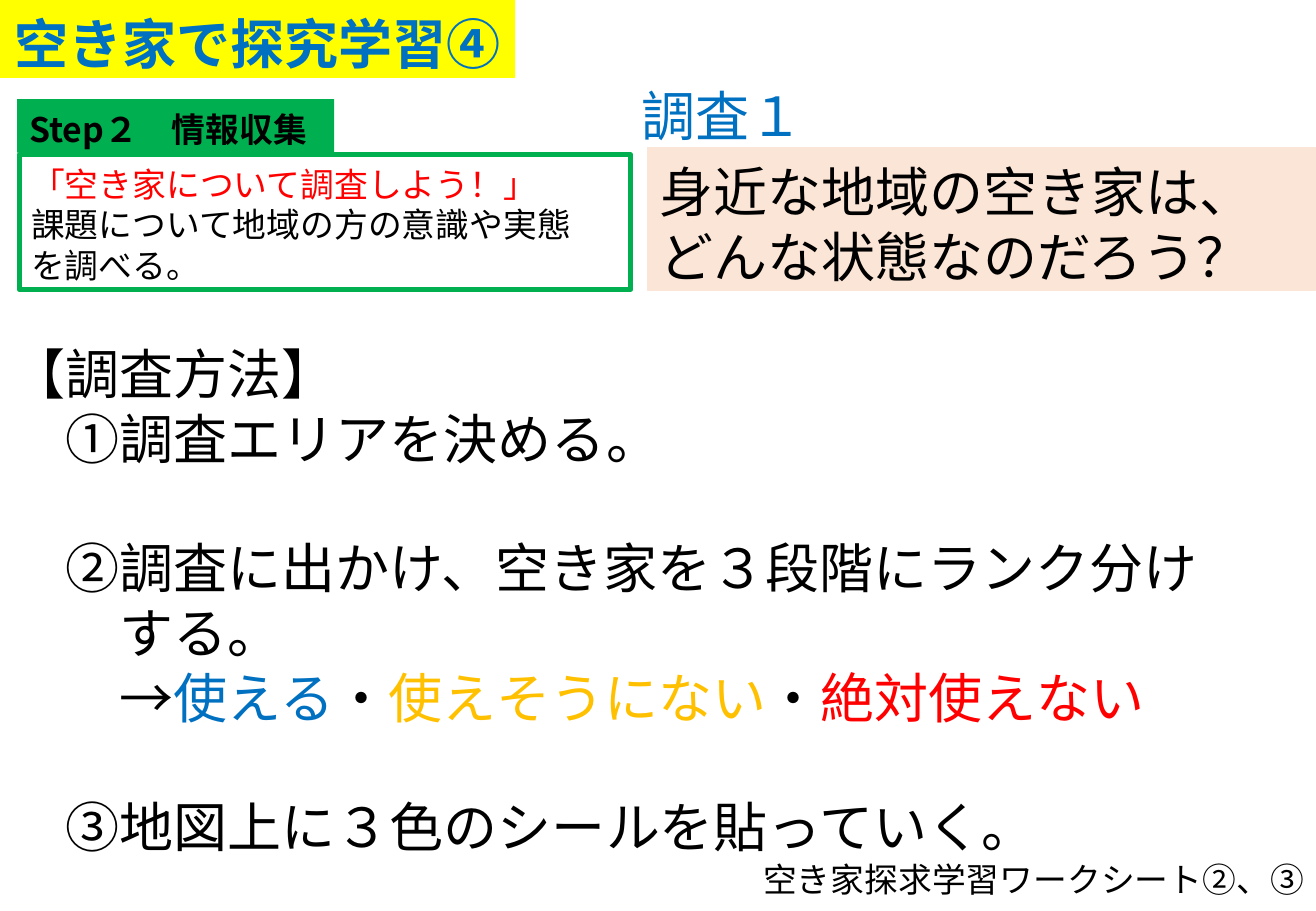
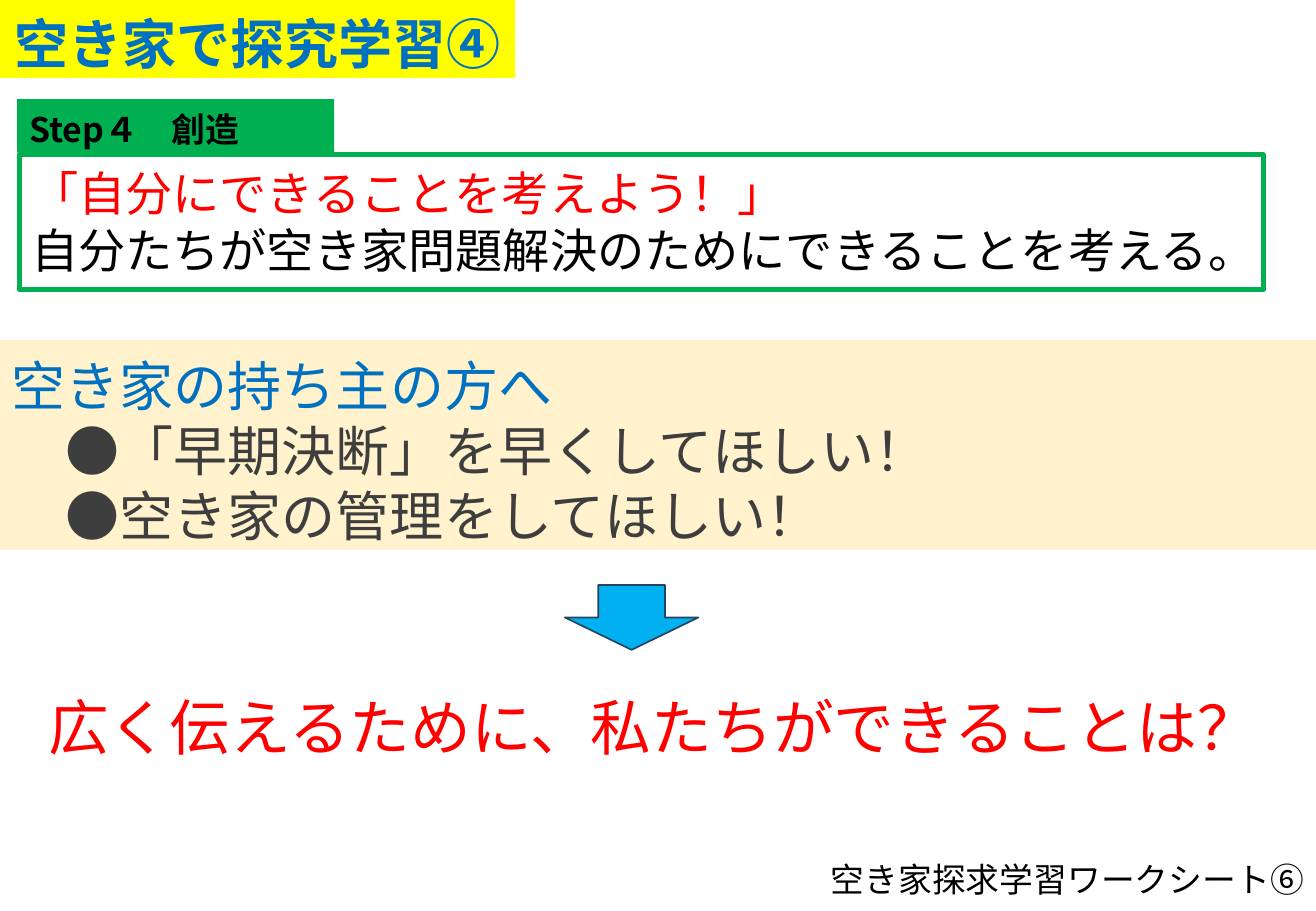
from pptx import Presentation
from pptx.dml.color import RGBColor
from pptx.enum.shapes import MSO_SHAPE
from pptx.enum.text import MSO_ANCHOR, PP_ALIGN
from pptx.util import Emu, Pt

RECT, DOWN_ARROW = MSO_SHAPE.RECTANGLE, MSO_SHAPE.DOWN_ARROW
TOP, MIDDLE = MSO_ANCHOR.TOP, MSO_ANCHOR.MIDDLE
LEFT, CENTER, RIGHT = PP_ALIGN.LEFT, PP_ALIGN.CENTER, PP_ALIGN.RIGHT

EMU_PER_PX = 7620
SLIDE_W, SLIDE_H = 1300, 900
JAPANESE, LATIN = "Noto Sans CJK JP", "Calibri"
LINE_RATIO, BASELINE_SHIFT, INSET = 1.2, 0.08, 3.6

BLACK, RED, BLUE, AMBER, GRAY = "000000", "FF0000", "0070C0", "FFC000", "3E3E3E"
YELLOW, GREEN, PEACH, CREAM = "FFFF00", "00B050", "FBE5D6", "FFF2CC"
SKY, NAVY = "00B0F0", "28445D"


def px(value):
    """Turn pixels into EMU."""
    return Emu(value * EMU_PER_PX)


def rgb(hex_code):
    """Turn a hex string into a colour."""
    return RGBColor.from_string(hex_code)


def assign(target, values):
    """Set each attribute named in a dict of format values."""
    for name, value in values.items():
        setattr(target, name, value)


def add_panel(slide, box, fill=None, line=None, line_pt=0.75, kind=RECT):
    """Add a preset shape with the given fill and outline."""
    panel = slide.shapes.add_shape(kind, *map(px, box))
    panel.shadow.inherit = False
    if fill:
        panel.fill.solid()
        panel.fill.fore_color.rgb = rgb(fill)
    else:
        panel.fill.background()
    if line:
        panel.line.color.rgb = rgb(line)
        panel.line.width = Pt(line_pt)
    else:
        panel.line.fill.background()
    return panel


def add_label(slide, box):
    """Add a bare text box."""
    return slide.shapes.add_textbox(*map(px, box))


def write(holder, lines, size, align=LEFT, anchor=TOP, bold=False, font=JAPANESE):
    """Write lines of (runs, indent in characters, blank lines before)."""
    frame = holder.text_frame
    shift = BASELINE_SHIFT * size
    assign(frame, {
        "word_wrap": True,
        "vertical_anchor": anchor,
        "margin_top": Pt(INSET + shift),
        "margin_bottom": Pt(INSET - shift),
    })
    for index, (runs, indent, gap) in enumerate(lines):
        paragraph = frame.add_paragraph() if index else frame.paragraphs[0]
        assign(paragraph, {
            "alignment": align,
            "line_spacing": Pt(size * LINE_RATIO),
            "space_before": Pt(size * LINE_RATIO * gap),
        })
        if indent:
            paragraph._p.get_or_add_pPr().set("marL", str(Pt(size * indent)))
        for text, color in runs:
            run = paragraph.add_run()
            run.text = text
            assign(run.font, {"size": Pt(size), "bold": bold, "name": font})
            run.font.color.rgb = rgb(color)
            east_asian = run._r.rPr.makeelement(
                run._r.rPr.latin.tag.replace("latin", "ea"), {"typeface": JAPANESE})
            run._r.rPr.latin.addnext(east_asian)


def plain(text, color=BLACK, indent=0, gap=0):
    """Describe a line of one colour."""
    return [(text, color)], indent, gap


def add_lesson_title(slide):
    """Place the yellow lesson band."""
    band = add_panel(slide, (0, 0, 509, 77), YELLOW)
    write(band, [plain("空き家で探究学習④", BLUE)], 32, CENTER, MIDDLE, True)


def add_step(slide, box, step, goal, details, size):
    """Place a step tag with its framed goal below, within the box."""
    left, top, width, height = box
    tag_height = 53
    tag = add_panel(slide, (left, top, 313, tag_height), GREEN)
    write(tag, [plain(step)], 20, LEFT, MIDDLE, True)
    frame_box = (left + 2, top + tag_height + 2, width - 2, height - tag_height - 2)
    goal_frame = add_panel(slide, frame_box, line=GREEN, line_pt=3)
    write(goal_frame, [plain(goal, RED), *map(plain, details)], size)


def add_question(slide, box, heading, question):
    """Place a survey heading above its tinted question, within the box."""
    left, top, width, height = box
    heading_height = 75
    write(add_label(slide, (left - 18, top, width, 77)), [plain(heading, BLUE)], 32)
    panel = add_panel(
        slide, (left, top + heading_height, width, height - heading_height), PEACH, PEACH)
    write(panel, [plain(question)], 32, LEFT, MIDDLE)


def add_worksheet_note(slide, text):
    """Place the worksheet reference at the lower right."""
    width = 560
    note = add_label(slide, (SLIDE_W - width, 840, width, 53))
    write(note, [plain(text)], 20, RIGHT, font=LATIN)


def build_survey(slide):
    """Build the slide on collecting information."""
    add_lesson_title(slide)
    add_step(slide, (17, 98, 606, 188), "Step２　情報収集",
             "「空き家について調査しよう！」",
             ["課題について地域の方の意識や実態", "を調べる。"], 20)
    add_question(slide, (640, 71, 659, 216), "調査１",
                 "身近な地域の空き家は、どんな状態なのだろう？")
    ranks = [("→", BLACK), ("使える", BLUE), ("・", BLACK),
             ("使えそうにない", AMBER), ("・", BLACK), ("絶対使えない", RED)]
    write(add_label(slide, (0, 326, 1298, 529)), [
        plain("【調査方法】"),
        plain("①調査エリアを決める。", indent=1),
        plain("②調査に出かけ、空き家を３段階にランク分け", indent=1, gap=1),
        plain("する。", indent=2),
        (ranks, 2, 0),
        plain("③地図上に３色のシールを貼っていく。", indent=1, gap=1),
    ], 32)
    add_worksheet_note(slide, "空き家探求学習ワークシート②、③")


def build_creation(slide):
    """Build the slide on what the learners can do."""
    add_lesson_title(slide)
    add_step(slide, (17, 98, 1231, 188), "Step４　創造",
             "「自分にできることを考えよう！」",
             ["自分たちが空き家問題解決のためにできることを考える。"], 28)
    owners = add_panel(slide, (0, 337, SLIDE_W, 206), CREAM, CREAM)
    write(owners, [
        plain("空き家の持ち主の方へ", BLUE),
        plain("●「早期決断」を早くしてほしい！", GRAY, 1),
        plain("●空き家の管理をしてほしい！", GRAY, 1),
    ], 32, LEFT, MIDDLE)
    add_panel(slide, (558, 578, 132, 64), SKY, NAVY, 1, DOWN_ARROW)
    write(add_label(slide, (0, 671, 1290, 85)),
          [plain("広く伝えるために、私たちができることは？", RED)], 36, CENTER)
    add_worksheet_note(slide, "空き家探求学習ワークシート⑥")


def main():
    """Build and save the presentation."""
    deck = Presentation()
    assign(deck, {"slide_width": px(SLIDE_W), "slide_height": px(SLIDE_H)})
    blank = deck.slide_layouts[6]
    for build in (build_survey, build_creation):
        build(deck.slides.add_slide(blank))
    deck.save("out.pptx")


if __name__ == "__main__":
    main()
